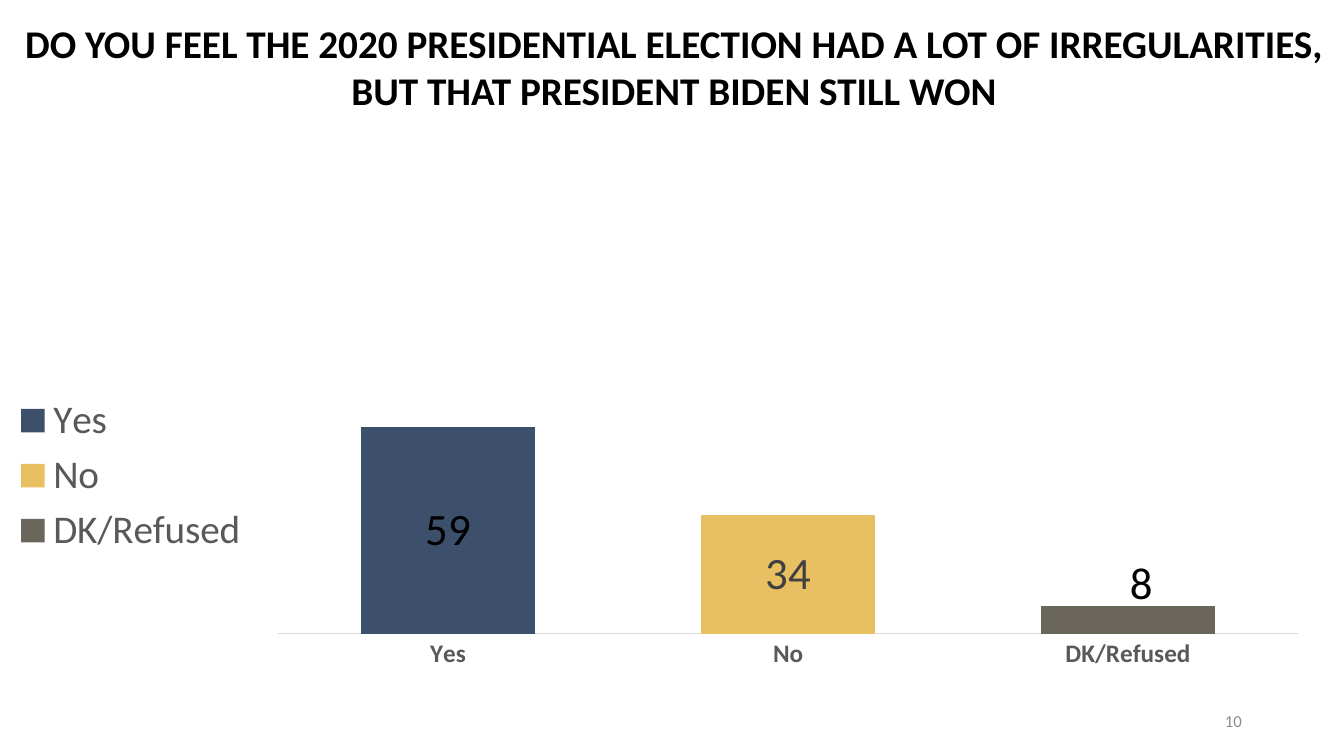
from dataclasses import dataclass

from lxml import etree
from pptx import Presentation
from pptx import util as u
from pptx.chart.data import CategoryChartData
from pptx.dml.color import RGBColor
from pptx.enum import chart as charts, text
from pptx.oxml import ns


@dataclass(frozen=True)
class Theme:
    font: str = "Calibri"
    ink: str = "000000"
    soft_ink: str = "404040"
    axis_ink: str = "595959"
    page_ink: str = "8C8C8C"
    axis_line: str = "D9D9D9"
    navy: str = "3C4F6B"
    gold: str = "E8C062"
    olive: str = "6B665B"
    title_size: int = 28
    legend_size: int = 28
    label_size: int = 32
    axis_size: int = 18
    page_size: int = 12


THEME = Theme()
# Answer, percentage, bar colour, label colour
ANSWERS = [
    ("Yes", 59, THEME.navy, THEME.ink),
    ("No", 34, THEME.gold, THEME.soft_ink),
    ("DK/Refused", 8, THEME.olive, THEME.ink),
]


def set_values(target, values):
    for name, value in values.items():
        setattr(target, name, value)


def set_font(font, size, color, bold=False):
    set_values(font, {"name": THEME.font, "size": u.Pt(size), "bold": bold})
    font.color.rgb = RGBColor.from_string(color)


def add_text(slide, box, content, size, color, frame_format, alignment, bold=False):
    shape = slide.shapes.add_textbox(*map(u.Cm, box))
    set_values(shape.text_frame, {"word_wrap": True, **frame_format})
    paragraph = shape.text_frame.paragraphs[0]
    paragraph.alignment = alignment
    run = paragraph.add_run()
    run.text = content
    set_font(run.font, size, color, bold)


def make_layout(values):
    """Build a manual chart layout from element names and values."""
    layout = etree.Element(ns.qn("c:layout"))
    manual = etree.SubElement(layout, ns.qn("c:manualLayout"))
    for name, value in values.items():
        etree.SubElement(manual, ns.qn(f"c:{name}")).set("val", str(value))
    return layout


def place_plot(chart, values):
    plot_area = chart.plots[0]._element.getparent()
    for old_layout in plot_area.findall(ns.qn("c:layout")):
        plot_area.remove(old_layout)
    plot_area.insert(0, make_layout(values))


def style_axes(chart):
    value_axis = chart.value_axis
    set_values(value_axis, {"minimum_scale": 0, "maximum_scale": 100,
                            "has_major_gridlines": False, "visible": False})
    category_axis = chart.category_axis
    set_values(category_axis, {"major_tick_mark": charts.XL_TICK_MARK.NONE,
                               "minor_tick_mark": charts.XL_TICK_MARK.NONE})
    set_font(category_axis.tick_labels.font, THEME.axis_size, THEME.axis_ink, True)
    category_axis.format.line.color.rgb = RGBColor.from_string(THEME.axis_line)
    category_axis.format.line.width = u.Pt(0.75)


def style_series(series, color, label_color):
    series.format.fill.solid()
    series.format.fill.fore_color.rgb = RGBColor.from_string(color)
    labels = series.data_labels
    set_values(labels, {"show_value": True,
                        "position": charts.XL_LABEL_POSITION.CENTER})
    set_font(labels.font, THEME.label_size, label_color)


def lift_label(series, index, color):
    """Move the label of a low bar above it."""
    label = series.points[index].data_label
    label.position = charts.XL_LABEL_POSITION.CENTER
    set_font(label.font, THEME.label_size, color)
    element = series.data_labels._element.find(ns.qn("c:dLbl"))
    element.insert(1, make_layout({"x": 0.01, "y": -0.09}))


def add_answer_chart(slide, box):
    data = CategoryChartData()
    data.categories = [answer[0] for answer in ANSWERS]
    stack = ANSWERS[::-1]
    for name, value, _, _ in stack:
        data.add_series(name, [value if category[0] == name else None
                               for category in ANSWERS])
    chart = slide.shapes.add_chart(charts.XL_CHART_TYPE.COLUMN_STACKED,
                                   *map(u.Cm, box), data).chart
    set_values(chart, {"has_title": False, "has_legend": True})
    set_values(chart.plots[0], {"gap_width": 95, "overlap": 100,
                                "vary_by_categories": False})
    set_values(chart.legend, {"position": charts.XL_LEGEND_POSITION.LEFT,
                              "include_in_layout": False})
    set_font(chart.legend.font, THEME.legend_size, THEME.axis_ink)
    style_axes(chart)
    for series, (_, _, color, label_color) in zip(chart.plots[0].series, stack):
        style_series(series, color, label_color)
    lift_label(chart.plots[0].series[0], len(ANSWERS) - 1, THEME.ink)
    place_plot(chart, {"layoutTarget": "inner", "xMode": "edge", "yMode": "edge",
                       "x": 0.21, "y": 0.02, "w": 0.77, "h": 0.875})


def main():
    presentation = Presentation()
    set_values(presentation, {"slide_width": u.Cm(33.87), "slide_height": u.Cm(19.05)})
    slide = presentation.slides.add_slide(presentation.slide_layouts[6])

    # Bar chart of answers
    add_answer_chart(slide, (0, 6.93, 33.38, 10.11))

    # Question
    add_text(slide, (0.1, 0.36, 33.76, 3.84),
             "DO YOU FEEL THE 2020 PRESIDENTIAL ELECTION HAD A LOT OF "
             "IRREGULARITIES, BUT THAT PRESIDENT BIDEN STILL WON",
             THEME.title_size, THEME.ink,
             {"vertical_anchor": text.MSO_ANCHOR.TOP}, text.PP_ALIGN.CENTER, True)

    # Page number
    add_text(slide, (23.93, 17.65, 7.62, 1.02), "10", THEME.page_size, THEME.page_ink,
             {"vertical_anchor": text.MSO_ANCHOR.MIDDLE}, text.PP_ALIGN.RIGHT)

    presentation.save("out.pptx")


if __name__ == "__main__":
    main()
